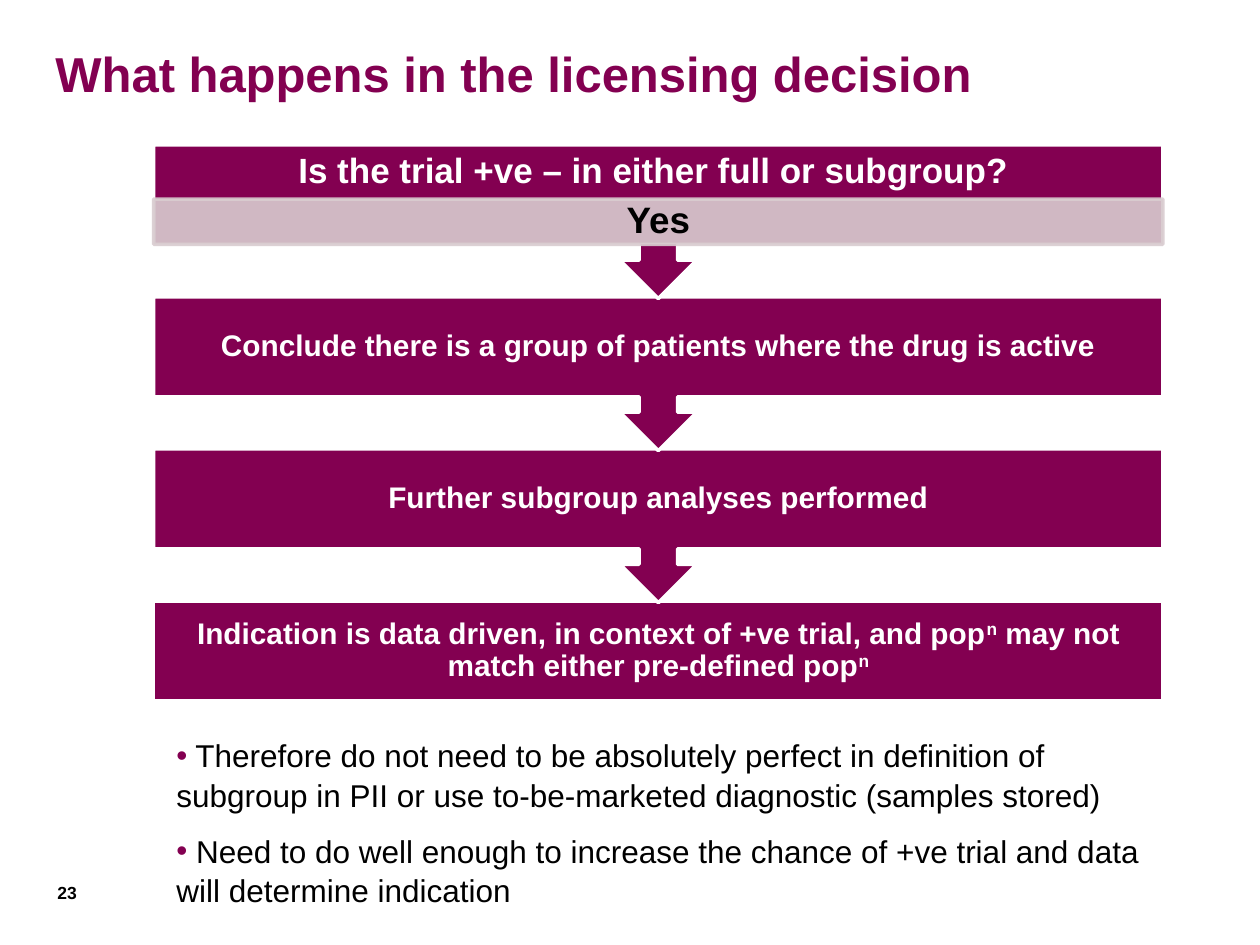
from lxml import etree
from pptx import Presentation
from pptx.dml.color import RGBColor
from pptx.enum import shapes, text
from pptx.oxml.ns import qn
from pptx.util import Inches, Pt

PLUM, PINK, WHITE, BLACK = "830051", "D9CCD0", "FFFFFF", "000000"
STEPS = [
    "Is the trial +ve – in either full or subgroup? ",
    "Conclude there is a group of patients where the drug is active",
    "Further subgroup analyses performed",
    "Indication is data driven, in context of +ve trial, and pop^n^"
    " may not match either pre-defined pop^n",
]
BULLETS = [
    " Therefore do not need to be absolutely perfect in definition of subgroup"
    " in PII or use to-be-marketed diagnostic (samples stored)",
    " Need to do well enough to increase the chance of +ve trial and data"
    " will determine indication",
]


def rgb(value):
    return RGBColor.from_string(value)


def set_all(obj, values):
    for name, value in values.items():
        setattr(obj, name, value)


def place(sp, box):
    for name, value in zip(("left", "top", "width", "height"), box):
        setattr(sp, name, Inches(value))


def set_frame(tf, insets, anchor=text.MSO_ANCHOR.TOP):
    left, top, right, bottom = map(Inches, insets)
    set_all(tf, dict(word_wrap=True, auto_size=text.MSO_AUTO_SIZE.NONE,
                     vertical_anchor=anchor, margin_left=left, margin_top=top,
                     margin_right=right, margin_bottom=bottom))


def write(p, words, size, color, bold=False, **layout):
    """Fill a paragraph; parts between ^ marks are superscript."""
    set_all(p, layout)
    for i, part in enumerate(words.split("^")):
        r = p.add_run()
        r.text = part
        set_all(r.font, dict(name="Arial", size=Pt(size), bold=bold))
        r.font.color.rgb = rgb(color)
        if i % 2:
            r._r.get_or_add_rPr().set("baseline", "30000")


def add_block(slide, kind, box, words, size, insets, fill=PLUM, line=WHITE,
              color=WHITE):
    sp = slide.shapes.add_shape(kind, *map(Inches, box))
    sp.shadow.inherit = False
    sp.fill.solid()
    sp.fill.fore_color.rgb = rgb(fill)
    sp.line.color.rgb = rgb(line)
    sp.line.width = Pt(2)
    set_frame(sp.text_frame, insets, text.MSO_ANCHOR.MIDDLE)
    write(sp.text_frame.paragraphs[0], words, size, color, True,
          alignment=text.PP_ALIGN.CENTER, line_spacing=0.9)
    return sp


def add_title(slide, box, words):
    sp = slide.shapes.title
    place(sp, box)
    set_frame(sp.text_frame, (0.1, 0.05, 0.1, 0.05), text.MSO_ANCHOR.MIDDLE)
    write(sp.text_frame.paragraphs[0], words, 28, PLUM, True,
          alignment=text.PP_ALIGN.LEFT)


def add_flow(slide, box, steps):
    left, top, width, height = box
    block, callout, answer = 0.79, 1.22, 0.36
    pitch = (height - block) / (len(steps) - 1)
    # Bottom step first, so each arrow lies over the step below it
    for i in reversed(range(len(steps))):
        last, first = i == len(steps) - 1, i == 0
        kind = (shapes.MSO_SHAPE.RECTANGLE if last
                else shapes.MSO_SHAPE.DOWN_ARROW_CALLOUT)
        insets = (0.16, 0, 0.16, answer) if first else (0.13,) * 4
        add_block(slide, kind,
                  (left, top + i * pitch, width, block if last else callout),
                  steps[i], 20 if first else 17, insets)
    # Answer strip across the lower part of the first step
    sp = add_block(slide, shapes.MSO_SHAPE.RECTANGLE,
                   (left, top + block - answer, width, answer), "Yes", 21,
                   (0.16, 0.03, 0.16, 0.03), PINK, PINK, BLACK)
    for clr in sp._element.spPr.iter(qn("a:srgbClr")):
        etree.SubElement(clr, qn("a:alpha"), val="90000")


def add_bullets(slide, box, items):
    sp = slide.placeholders[1]
    place(sp, box)
    tf = sp.text_frame
    set_frame(tf, (0.1, 0.35, 0.1, 0.05))
    for i, item in enumerate(items):
        p = tf.add_paragraph() if i else tf.paragraphs[0]
        pPr = p._p.get_or_add_pPr()
        set_all(p, dict(line_spacing=1.05, space_before=Pt(9 if i else 0)))
        pPr.set("marL", "0")
        pPr.set("indent", "0")
        bu_clr = etree.SubElement(pPr, qn("a:buClr"))
        etree.SubElement(bu_clr, qn("a:srgbClr"), val=PLUM)
        etree.SubElement(pPr, qn("a:buChar"), char="•")
        write(p, item, 18, BLACK)


def add_page_number(slide, box, number):
    tf = slide.shapes.add_textbox(*map(Inches, box)).text_frame
    set_frame(tf, (0.02, 0.05, 0.02, 0.05))
    write(tf.paragraphs[0], number, 10, BLACK, True,
          alignment=text.PP_ALIGN.RIGHT)


def main():
    prs = Presentation()
    prs.slide_width, prs.slide_height = Inches(10), Inches(7.5)
    slide = prs.slides.add_slide(prs.slide_layouts[1])
    add_title(slide, (0.34, 0.3, 9.2, 0.56),
              "What happens in the licensing decision")
    add_bullets(slide, (1.3, 5.48, 7.87, 2.51), BULLETS)
    add_page_number(slide, (0.12, 6.95, 0.51, 0.39), "23")
    add_flow(slide, (1.22, 1.15, 8.01, 4.41), STEPS)
    prs.save("out.pptx")


if __name__ == "__main__":
    main()
